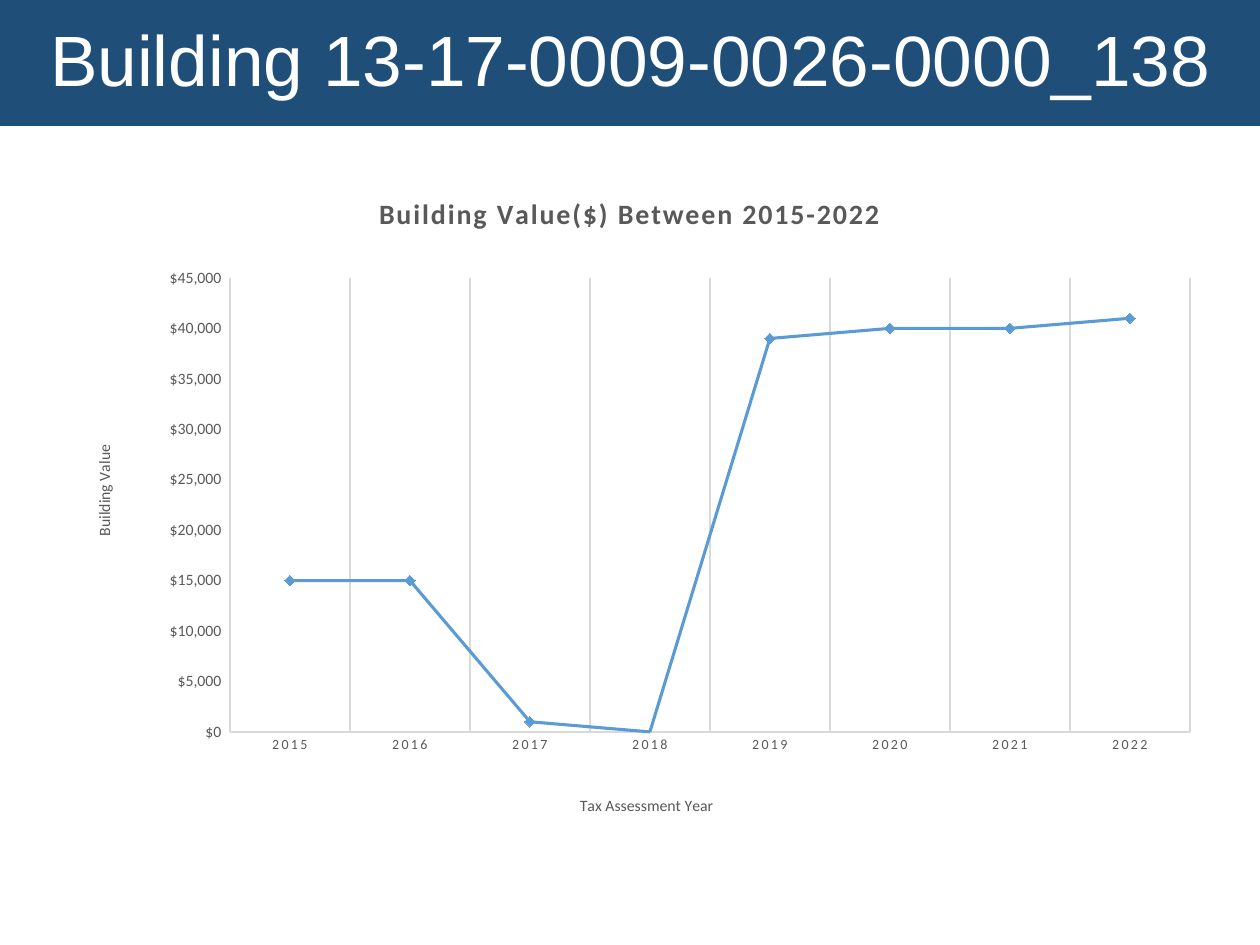
from lxml import etree
from pptx import Presentation
from pptx.chart.data import CategoryChartData
from pptx.dml.color import RGBColor
from pptx.enum.chart import XL_CHART_TYPE, XL_MARKER_STYLE, XL_TICK_MARK
from pptx.enum.shapes import MSO_SHAPE
from pptx.enum.text import MSO_ANCHOR, PP_ALIGN
from pptx.oxml.ns import qn
from pptx.util import Pt

LINE = XL_CHART_TYPE.LINE_MARKERS
DIAMOND = XL_MARKER_STYLE.DIAMOND
NO_TICK = XL_TICK_MARK.NONE
RECT = MSO_SHAPE.RECTANGLE
MIDDLE = MSO_ANCHOR.MIDDLE
CENTER = PP_ALIGN.CENTER

PX = 914400 / 126
LEFT, TOP, WIDTH, HEIGHT = 52, 180, 1158, 672


class Theme:
    navy = RGBColor(0x1F, 0x4E, 0x79)
    white = RGBColor(0xFF, 0xFF, 0xFF)
    gray = RGBColor(0x59, 0x59, 0x59)
    rule = RGBColor(0xD9, 0xD9, 0xD9)
    blue = RGBColor(0x5B, 0x9B, 0xD5)
    head_face, face = "Arial", "Calibri"
    head, title, base, value, year = 40.7, 16, 10, 9, 8


def write(frame, text, size, color=Theme.gray, face=Theme.face, bold=False, gap=0):
    """Put one run of text in the frame; gap is letter spacing in points."""
    para = frame.paragraphs[0]
    para.alignment = CENTER
    run = para.add_run()
    run.text = text
    font = run.font
    font.size, font.name, font.bold = Pt(size), face, bold
    font.color.rgb = color
    if gap:
        run._r.get_or_add_rPr().set("spc", str(int(gap * 100)))
    return para


def place(node, index, x, y, w=None, h=None):
    """Pin a chart part at slide pixels, as fractions of the chart."""
    old = node.find(qn("c:layout"))
    if old is not None:
        node.remove(old)
    layout = etree.Element(qn("c:layout"))
    manual = etree.SubElement(layout, qn("c:manualLayout"))
    parts = [("xMode", "edge"), ("yMode", "edge"),
             ("x", (x - LEFT) / WIDTH), ("y", (y - TOP) / HEIGHT)]
    if w:
        parts = [("layoutTarget", "inner")] + parts + [("w", w / WIDTH), ("h", h / HEIGHT)]
    for name, value in parts:
        etree.SubElement(manual, qn("c:" + name)).set("val", str(value))
    node.insert(index, layout)


deck = Presentation()
deck.slide_width, deck.slide_height = int(1260 * PX), int(945 * PX)
slide = deck.slides.add_slide(deck.slide_layouts[6])

# Header band
band = slide.shapes.add_shape(RECT, 0, 0, int(1260 * PX), int(126 * PX))
band.shadow.inherit = False
band.fill.solid()
band.fill.fore_color.rgb = Theme.navy
band.line.fill.background()
band.text_frame.word_wrap = True
band.text_frame.vertical_anchor = MIDDLE
para = write(band.text_frame, "Building 13-17-0009-0026-0000_138", Theme.head,
             color=Theme.white, face=Theme.head_face)
para.line_spacing = 0.9

# Building values by year
data = CategoryChartData()
data.categories = [str(year) for year in range(2015, 2023)]
data.add_series("Series 1", (15000, 15000, 1000, 0, 39000, 40000, 40000, 41000))
box = [int(n * PX) for n in (LEFT, TOP, WIDTH, HEIGHT)]
chart = slide.shapes.add_chart(LINE, *box, data).chart
chart.has_legend = False
chart.font.size, chart.font.name = Pt(Theme.base), Theme.face
place(chart._chartSpace.chart.plotArea, 0, 230, 278, 960, 454)

chart.has_title = True
years, values = chart.category_axis, chart.value_axis
for owner, text, x, y, style in (
    (chart.chart_title, "Building Value($) Between 2015-2022", 374, 190,
     dict(size=Theme.title, bold=True, gap=1.2)),
    (years.axis_title, "Tax Assessment Year", 577, 792, dict(size=Theme.value)),
    (values.axis_title, "Building Value", 91, 442, dict(size=Theme.value)),
):
    write(owner.text_frame, text, **style)
    place(owner._element, 1, x, y)
values.axis_title.text_frame._txBody.bodyPr.set("rot", "-5400000")

for axis, size in ((years, Theme.year), (values, Theme.value)):
    axis.major_tick_mark = axis.minor_tick_mark = NO_TICK
    font = axis.tick_labels.font
    font.size, font.name = Pt(size), Theme.face
    font.color.rgb = Theme.gray
    axis.format.line.color.rgb = Theme.rule
    axis.format.line.width = Pt(0.75)
years.tick_labels.font._element.set("spc", "120")
years.has_major_gridlines = True
grid = years.major_gridlines.format.line
grid.color.rgb, grid.width = Theme.rule, Pt(0.75)
values.has_major_gridlines = False
values.minimum_scale = 0.01
values.tick_labels.number_format = '_("$"* #,##0_);_("$"* \\(#,##0\\);_("$"* "-"??_);_(@_)'
values.tick_labels.number_format_is_linked = False

plot = chart.plots[0]
plot.vary_by_categories = False
series = plot.series[0]
series.smooth = False
series.format.line.color.rgb = Theme.blue
series.format.line.width = Pt(1.75)
mark = series.marker
mark.style, mark.size = DIAMOND, 6
mark.format.fill.solid()
mark.format.fill.fore_color.rgb = Theme.blue
mark.format.line.color.rgb = Theme.blue

deck.save("out.pptx")
